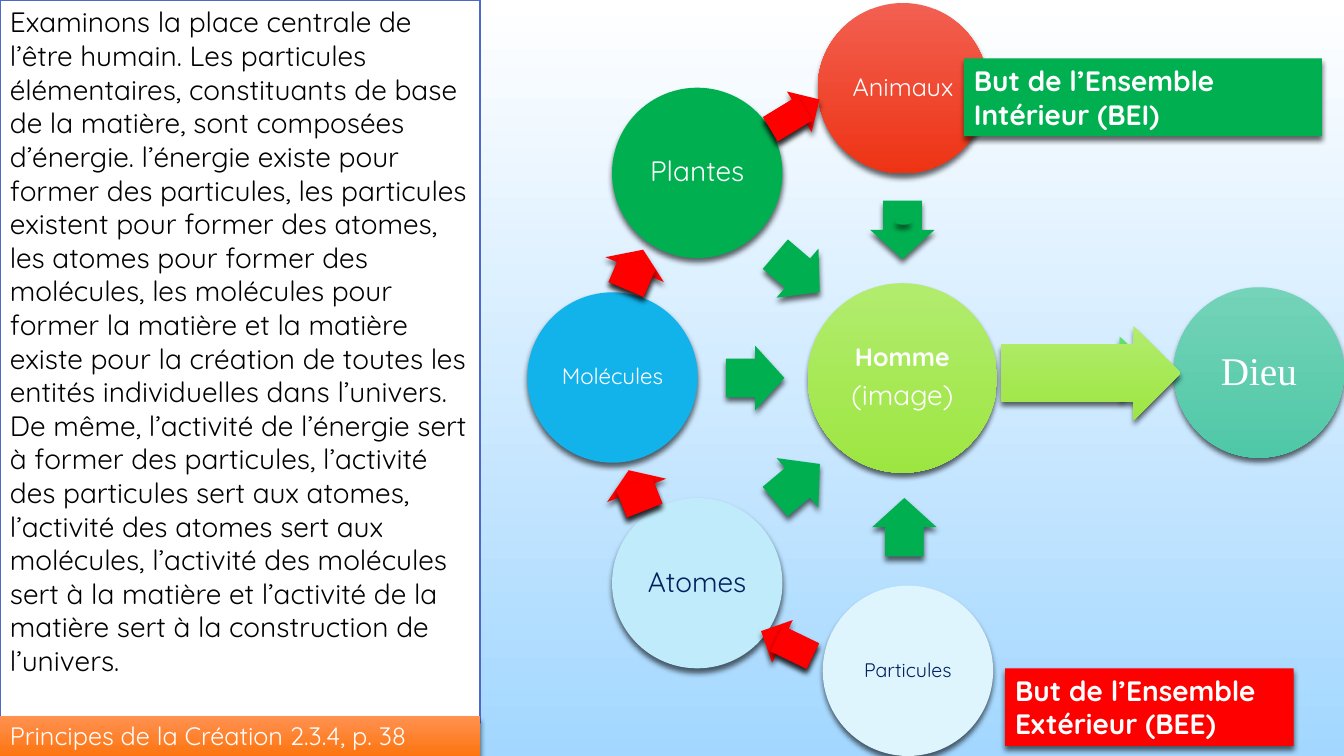
from math import cos, radians, sin

from lxml.etree import SubElement
from pptx import Presentation
from pptx.dml.color import RGBColor
from pptx.enum.shapes import MSO_SHAPE
from pptx.enum.text import MSO_ANCHOR, PP_ALIGN
from pptx.oxml.ns import qn
from pptx.util import Inches, Pt

WHITE = RGBColor(0xFF, 0xFF, 0xFF)
BLACK = RGBColor(0x00, 0x00, 0x00)
NAVY = RGBColor(0x00, 0x20, 0x60)
INDIGO = RGBColor(0x4E, 0x67, 0xC8)
RED = RGBColor(0xFF, 0x00, 0x00)
GREEN = RGBColor(0x00, 0xB0, 0x50)
BLUE = RGBColor(0x12, 0xB2, 0xEB)
PALE_BLUE = RGBColor(0xBF, 0xEB, 0xFA)
PALEST_BLUE = RGBColor(0xDF, 0xF5, 0xFD)
SKY = (WHITE, RGBColor(0xA3, 0xD7, 0xFF))
LIME = (RGBColor(0xB2, 0xEC, 0x6E), RGBColor(0x9D, 0xE6, 0x41))
CORAL = (RGBColor(0xF2, 0x60, 0x51), RGBColor(0xEE, 0x33, 0x14))
TEAL = (RGBColor(0x74, 0xD3, 0xB8), RGBColor(0x4F, 0xC8, 0xA7))
MEADOW = (RGBColor(0x68, 0xDF, 0x6F), RGBColor(0x3D, 0xD7, 0x48))
ORANGE = (RGBColor(0xFF, 0x91, 0x51), RGBColor(0xFD, 0x75, 0x10))

CIRCLE_SIZE = 1.69
EXPLANATION = (
    "Examinons la place centrale de l’être humain. Les particules élémentaires, "
    "constituants de base de la matière, sont composées d’énergie. l’énergie existe "
    "pour former des particules, les particules existent pour former des atomes, les "
    "atomes pour former des molécules, les molécules pour former la matière et la "
    "matière existe pour la création de toutes les entités individuelles dans "
    "l’univers. De même, l’activité de l’énergie sert à former des particules, "
    "l’activité des particules sert aux atomes, l’activité des atomes sert aux "
    "molécules, l’activité des molécules sert à la matière et l’activité de la "
    "matière sert à la construction de l’univers."
)


def paint(fill, colour):
    """Fill with one colour, or with a pair running from top to bottom."""
    if isinstance(colour, RGBColor):
        fill.solid()
        fill.fore_color.rgb = colour
        return
    fill.gradient()
    fill.gradient_angle = 270
    for stop, shade in zip(fill.gradient_stops, colour):
        stop.color.rgb = shade


def write(paragraph, text, size=20, colour=WHITE, bold=False, font="Quicksand",
          align=PP_ALIGN.LEFT, line_spacing=1.0, space_after=0):
    paragraph.alignment = align
    paragraph.line_spacing = line_spacing
    paragraph.space_after = Pt(space_after)
    run = paragraph.add_run()
    run.text = text
    run.font.size = Pt(size)
    run.font.name = font
    run.font.bold = bold
    run.font.color.rgb = colour


def cast_shadow(shape):
    effects = shape._element.spPr.find(qn("a:effectLst"))
    shadow = SubElement(effects, qn("a:outerShdw"), blurRad=str(Pt(4)), dist=str(Pt(3)),
                        dir="5400000", algn="ctr", rotWithShape="0")
    black = SubElement(shadow, qn("a:srgbClr"), val="000000")
    SubElement(black, qn("a:alpha"), val="60000")


class Diagram:
    def __init__(self, slide):
        self.slide = slide
        paint(slide.background.fill, SKY)

    def shape(self, preset, left, top, width, height, fill, turn=0, shadow=True):
        item = self.slide.shapes.add_shape(
            preset, Inches(left), Inches(top), Inches(width), Inches(height))
        item.shadow.inherit = False
        item.rotation = turn
        item.line.fill.background()
        paint(item.fill, fill)
        if shadow:
            cast_shadow(item)
        return item

    def circle(self, left, top, fill, lines, size=CIRCLE_SIZE, inset=0.03):
        """Draw a circle; each line is a text with its format."""
        disc = self.shape(MSO_SHAPE.OVAL, left, top, size, size, fill)
        frame = disc.text_frame
        frame.word_wrap = True
        frame.vertical_anchor = MSO_ANCHOR.MIDDLE
        frame.margin_left = frame.margin_right = Inches(inset)
        frame.margin_top = frame.margin_bottom = Inches(inset)
        for index, (text, style) in enumerate(lines):
            paragraph = frame.add_paragraph() if index else frame.paragraphs[0]
            write(paragraph, text, align=PP_ALIGN.CENTER, line_spacing=0.9,
                  space_after=0.35 * style["size"], **style)

    def arrow(self, left, top, width, height, fill, turn=0):
        item = self.shape(MSO_SHAPE.RIGHT_ARROW, left, top, width, height, fill, turn)
        item.adjustments[0] = 0.6
        item.adjustments[1] = 0.5

    def chain_arrow(self, left, top, width, height, turn):
        """Draw a red arrow whose stem is a block of its own."""
        self.arrow(left, top, width, height, RED, turn)
        stem_width, stem_height = 0.7 * width, 0.6 * height
        back = (width - stem_width) / 2
        centre_x = left + width / 2 - back * cos(radians(turn))
        centre_y = top + height / 2 - back * sin(radians(turn))
        self.shape(MSO_SHAPE.RECTANGLE, centre_x - stem_width / 2,
                   centre_y - stem_height / 2, stem_width, stem_height, RED, turn)

    def panel(self, left, top, width, height, fill, lines, outline=None, **style):
        """Draw a text panel with an outline or, without one, a shadow."""
        box = self.shape(MSO_SHAPE.RECTANGLE, left, top, width, height, fill,
                         shadow=outline is None)
        if outline is not None:
            box.line.color.rgb = outline
            box.line.width = Pt(1.25)
        frame = box.text_frame
        frame.word_wrap = True
        frame.vertical_anchor = MSO_ANCHOR.TOP
        for index, text in enumerate(lines):
            paragraph = frame.add_paragraph() if index else frame.paragraphs[0]
            write(paragraph, text, **style)


def main():
    deck = Presentation()
    deck.slide_width, deck.slide_height = Inches(13.33), Inches(7.5)
    diagram = Diagram(deck.slides.add_slide(deck.slide_layouts[6]))

    diagram.circle(8.01, 2.81, LIME, size=1.88, lines=[
        ("Homme", dict(size=18, bold=True)), ("(image)", dict(size=20))])

    for left, top, fill, label, style in [
        (8.11, 0.03, CORAL, "Animaux", dict(size=18)),
        (8.16, 5.81, PALEST_BLUE, "Particules", dict(size=14, colour=NAVY)),
        (6.07, 4.94, PALE_BLUE, "Atomes", dict(size=20, colour=NAVY)),
        (5.23, 2.9, BLUE, "Molécules", dict(size=16)),
        (6.07, 0.87, GREEN, "Plantes", dict(size=20)),
    ]:
        diagram.circle(left, top, fill, [(label, style)])

    for left, top, turn in [(8.66, 1.96, 90), (8.68, 4.91, 270), (7.62, 4.47, 319.9),
                            (7.2, 3.43, 0), (7.62, 2.39, 40.5)]:
        diagram.arrow(left, top, 0.58, 0.64, GREEN, turn)
    diagram.shape(MSO_SHAPE.OVAL, 8.88, 2.17, 0.16, 0.06, GREEN)

    diagram.arrow(10.5, 3.34, 0.93, 0.64, MEADOW, 359.2)
    diagram.circle(11.64, 2.85, TEAL, inset=0.04, lines=[
        ("Dieu", dict(size=28, font="Times New Roman"))])
    diagram.arrow(9.93, 3.23, 1.78, 0.94, LIME)

    for left, top, width, height, turn in [
        (6.08, 2.36, 0.43, 0.63, 293.1), (7.6, 0.9, 0.57, 0.47, 328.7),
        (6.1, 4.55, 0.43, 0.63, 248.4), (7.52, 6.15, 0.57, 0.47, 205.8),
    ]:
        diagram.chain_arrow(left, top, width, height, turn)

    diagram.panel(9.97, 6.63, 2.86, 0.77, RED,
                  ["But de l’Ensemble", "Extérieur (BEE)"], bold=True)
    diagram.panel(9.56, 0.58, 3.55, 0.77, GREEN,
                  ["But de l’Ensemble Intérieur (BEI)"], bold=True)
    diagram.panel(0, 0, 4.76, 7.17, WHITE, [EXPLANATION], outline=INDIGO, colour=BLACK)
    diagram.panel(0, 7.1, 4.76, 0.4, ORANGE,
                  ["Principes de la Création 2.3.4, p. 38"], size=18)
    deck.save("out.pptx")


if __name__ == "__main__":
    main()
